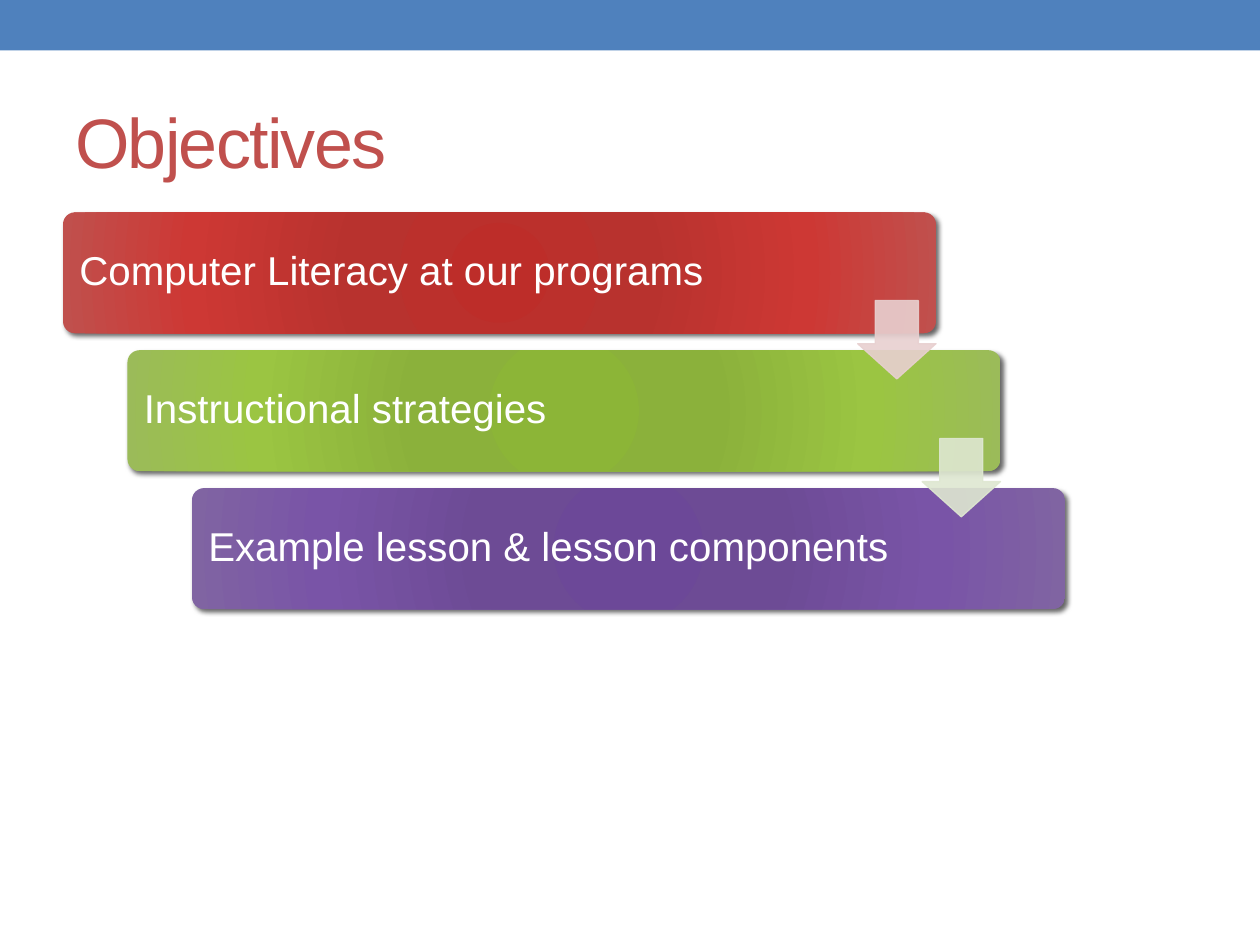
import pptx
import pptx.dml.color
import pptx.enum.shapes
import pptx.enum.text
import pptx.oxml
import pptx.oxml.ns
import pptx.util

Cm = pptx.util.Cm
Pt = pptx.util.Pt
RGBColor = pptx.dml.color.RGBColor
MSO_SHAPE = pptx.enum.shapes.MSO_SHAPE

BLUE = RGBColor(0x4F, 0x81, 0xBD)
RED = RGBColor(0xC0, 0x50, 0x4D)
WHITE = RGBColor(0xFF, 0xFF, 0xFF)
PALE_RED = RGBColor(0xE8, 0xD0, 0xD0)
PALE_GREEN = RGBColor(0xDE, 0xE7, 0xD1)
RED_SHADES = [RGBColor(0xBD, 0x2D, 0x29), RGBColor(0xB8, 0x32, 0x2E),
              RGBColor(0xCD, 0x38, 0x34), RED]
GREEN_SHADES = [RGBColor(0x8C, 0xB5, 0x37), RGBColor(0x8B, 0xB1, 0x3B),
                RGBColor(0x9B, 0xC5, 0x42), RGBColor(0x9B, 0xBB, 0x59)]
PURPLE_SHADES = [RGBColor(0x6C, 0x48, 0x98), RGBColor(0x6D, 0x4B, 0x95),
                 RGBColor(0x79, 0x54, 0xA7), RGBColor(0x80, 0x64, 0xA2)]
STOPS = [0, 34, 70, 100]
STEP_X, STEP_Y = 1.3, 2.78  # offset from one bar to the next, in cm


def add_text(text, left, top, width, height, size, color):
    box = slide.shapes.add_textbox(Cm(left), Cm(top), Cm(width), Cm(height))
    frame = box.text_frame
    frame.word_wrap = True
    frame.vertical_anchor = pptx.enum.text.MSO_ANCHOR.MIDDLE
    paragraph = frame.paragraphs[0]
    paragraph.text = text
    paragraph.font.name = "Arial"
    paragraph.font.size = Pt(size)
    paragraph.font.color.rgb = color
    return frame


def add_xml(parent, tag, index=None, **attributes):
    child = pptx.oxml.parse_xml(f"<a:{tag} {pptx.oxml.ns.nsdecls('a')}/>")
    for name, value in attributes.items():
        child.set(name, str(value))
    parent.insert(len(parent) if index is None else index, child)
    return child


presentation = pptx.Presentation()
presentation.slide_width = Cm(25.4)
presentation.slide_height = Cm(19.05)
slide = presentation.slides.add_slide(presentation.slide_layouts[6])

# Top band
band = slide.shapes.add_shape(MSO_SHAPE.RECTANGLE, 0, 0, Cm(25.4), Cm(1.02))
band.shadow.inherit = False
band.fill.solid()
band.fill.fore_color.rgb = BLUE
band.line.fill.background()

# Title, with slightly tightened letters
title = add_text("Objectives", 1.27, 1.47, 22.86, 2.74, 40, RED)
title.paragraphs[0].runs[0].font._element.set("spc", "-100")

# Staggered objective bars
objectives = [
    ("Computer Literacy at our programs", RED_SHADES),
    ("Instructional strategies", GREEN_SHADES),
    ("Example lesson & lesson components", PURPLE_SHADES),
]
for i, (objective, shades) in enumerate(objectives):
    left, top = 1.27 + i * STEP_X, 4.28 + i * STEP_Y
    bar = slide.shapes.add_shape(MSO_SHAPE.ROUNDED_RECTANGLE,
                                 Cm(left), Cm(top), Cm(17.6), Cm(2.44))
    bar.adjustments[0] = 0.1
    bar.line.fill.background()
    bar.shadow.inherit = False
    properties = bar._element.spPr

    # Radial gradient, right after the geometry
    gradient = add_xml(properties, "gradFill", index=2, rotWithShape=1)
    stops = add_xml(gradient, "gsLst")
    for position, shade in zip(STOPS, shades):
        stop = add_xml(stops, "gs", pos=position * 1000)
        add_xml(stop, "srgbClr", val=shade)
    circle = add_xml(gradient, "path", path="circle")
    add_xml(circle, "fillToRect", l=100000, t=100000, r=100000, b=100000)

    # Soft shadow to the lower right
    effects = properties.find(pptx.oxml.ns.qn("a:effectLst"))
    shadow = add_xml(effects, "outerShdw", blurRad=Pt(3), dist=Pt(2),
                     dir=45 * 60000, algn="ctr", rotWithShape=0)
    shadow_color = add_xml(shadow, "srgbClr", val="000000")
    add_xml(shadow_color, "alpha", val=60000)

    label = add_text(objective, left + 0.08, top + 0.07, 14.6, 2.29, 23, WHITE)
    label.margin_left = label.margin_right = Cm(0.25)
    label.margin_top = label.margin_bottom = Cm(0.25)
    label.paragraphs[0].line_spacing = 0.9

# Arrows leading to the next bar
for i, tint in enumerate([PALE_RED, PALE_GREEN]):
    arrow = slide.shapes.add_shape(MSO_SHAPE.DOWN_ARROW,
                                   Cm(17.29 + i * STEP_X), Cm(6.06 + i * STEP_Y),
                                   Cm(1.58), Cm(1.58))
    arrow.adjustments[0] = 0.55
    arrow.adjustments[1] = 0.45
    arrow.shadow.inherit = False
    arrow.line.width = Pt(0.75)
    for paint in (arrow.fill, arrow.line.fill):
        paint.solid()
        paint.fore_color.rgb = tint
    for color in arrow._element.spPr.iter(pptx.oxml.ns.qn("a:srgbClr")):
        add_xml(color, "alpha", val=90000)

presentation.save("out.pptx")
